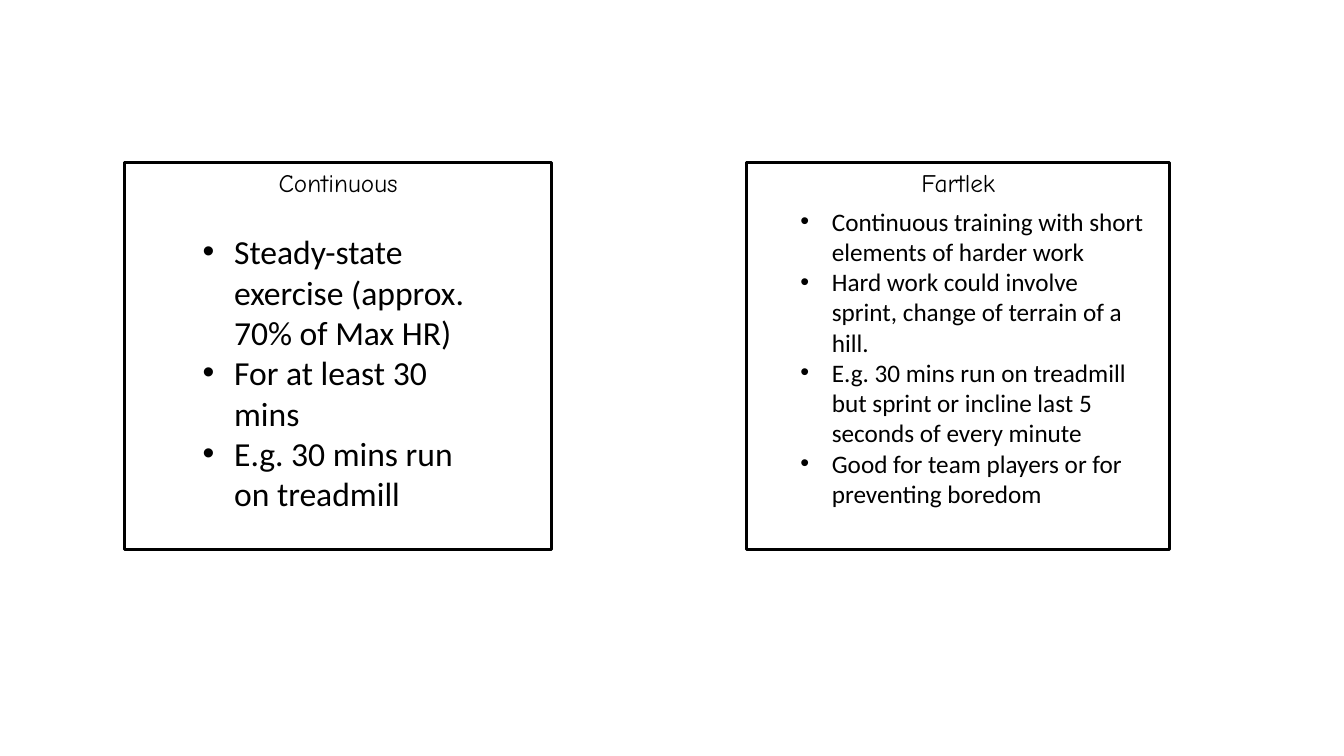
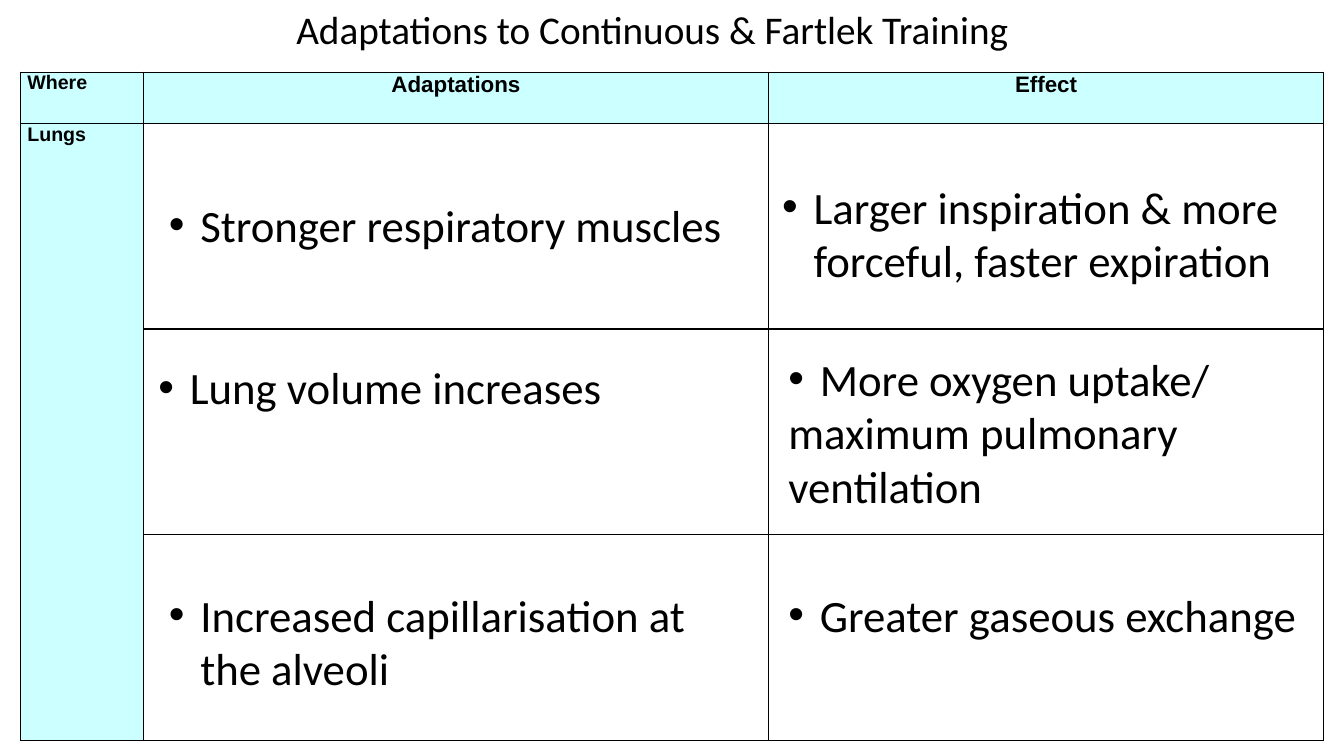
from lxml.etree import SubElement
from pptx import Presentation
from pptx.dml.color import RGBColor
from pptx.enum.text import MSO_ANCHOR, MSO_AUTO_SIZE, PP_ALIGN
from pptx.oxml.ns import qn
from pptx.util import Pt

# Shared look
BLACK, WHITE, HEADER_BLUE = "000000", "FFFFFF", "CCFFFF"
BODY_FONT, CARD_FONT, TABLE_FONT = "Calibri", "Comic Neue", "Arial"
BULLET_INDENT = 22.5
TITLE_ONLY, COMPARISON = 5, 4

# Training methods: heading, card area, list area, list size, points
METHODS = [
    ("Continuous", (89, 116, 305, 276.5), (137.5, 161.5, 220.5, 211), 24,
     ["Steady-state exercise (approx. 70% of Max HR)",
      "For at least 30 mins",
      "E.g. 30 mins run on treadmill"]),
    ("Fartlek", (533.5, 116, 302, 276.5), (564.5, 143.5, 263.5, 247), 18,
     ["Continuous training with short elements of harder work",
      "Hard work could involve sprint, change of terrain of a hill.",
      "E.g. 30 mins run on treadmill but sprint or incline last 5 "
      "seconds of every minute",
      "Good for team players or for preventing boredom"]),
]

# Lung adaptations and their effects: area, bulleted point, further lines
LUNG_POINTS = [
    ((113.5, 137.5, 414, 46), "Stronger respiratory muscles", []),
    ((551.5, 124.5, 386, 85), "Larger inspiration & more forceful, faster expiration", []),
    ((106, 253.5, 402.5, 46), "Lung volume increases", []),
    ((556, 247.5, 386, 124), "More oxygen uptake/",
     ["maximum pulmonary", "ventilation"]),
    ((113.5, 416, 425, 85), "Increased capillarisation at the alveoli", []),
    ((556, 416, 388, 46), "Greater gaseous exchange", []),
]


def colour(hex_code):
    return RGBColor.from_string(hex_code)


def place(shape, area):
    shape.left, shape.top, shape.width, shape.height = (Pt(length) for length in area)


def prepare_frame(shape):
    frame = shape.text_frame
    frame.word_wrap = True
    frame.auto_size = MSO_AUTO_SIZE.NONE
    frame.vertical_anchor = MSO_ANCHOR.TOP
    return frame


def write(paragraph, text, size, font=BODY_FONT, bold=False, align=PP_ALIGN.LEFT):
    paragraph.alignment = align
    paragraph.space_before = Pt(0)
    run = paragraph.add_run()
    run.text = text
    run.font.size = Pt(size)
    run.font.name = font
    run.font.bold = bold
    run.font.color.rgb = colour(BLACK)


def add_bullet(paragraph):
    properties = paragraph._p.get_or_add_pPr()
    properties.set("marL", str(Pt(BULLET_INDENT)))
    properties.set("indent", str(-Pt(BULLET_INDENT)))
    SubElement(properties, qn("a:buFont"), typeface="Arial")
    SubElement(properties, qn("a:buChar"), char="•")


def fill_list(shape, area, size, points, plain_lines=()):
    place(shape, area)
    frame = prepare_frame(shape)
    for index, text in enumerate([*points, *plain_lines]):
        paragraph = frame.paragraphs[0] if index == 0 else frame.add_paragraph()
        if index < len(points):
            add_bullet(paragraph)
        write(paragraph, text, size)


def fill_card(shape, area, heading):
    place(shape, area)
    shape.fill.solid()
    shape.fill.fore_color.rgb = colour(WHITE)
    shape.line.color.rgb = colour(BLACK)
    shape.line.width = Pt(2)
    write(prepare_frame(shape).paragraphs[0], heading, 18, CARD_FONT,
          align=PP_ALIGN.CENTER)


def add_borders(cell):
    properties = cell._tc.get_or_add_tcPr()
    for position, side in enumerate(("lnL", "lnR", "lnT", "lnB")):
        border = properties.makeelement(qn(f"a:{side}"), {"w": str(Pt(1))})
        fill = SubElement(border, qn("a:solidFill"))
        SubElement(fill, qn("a:srgbClr"), val=BLACK)
        properties.insert(position, border)


def add_adaptation_table(slide):
    widths, heights = (88, 446.5, 396.5), (36.5, 147, 147, 147)
    table = slide.shapes.add_table(
        len(heights), len(widths), Pt(14.5), Pt(51.5),
        Pt(sum(widths)), Pt(sum(heights))).table
    table.first_row = table.horz_banding = False
    for column, width in zip(table.columns, widths):
        column.width = Pt(width)
    for row, height in zip(table.rows, heights):
        row.height = Pt(height)

    # Tinted header row and first column, plain body
    for row in range(len(heights)):
        for column in range(len(widths)):
            cell = table.cell(row, column)
            cell.margin_left = cell.margin_right = Pt(5)
            cell.margin_top = cell.margin_bottom = Pt(0)
            if row == 0 or column == 0:
                cell.fill.solid()
                cell.fill.fore_color.rgb = colour(HEADER_BLUE)
            else:
                cell.fill.background()
            add_borders(cell)
    table.cell(1, 0).merge(table.cell(len(heights) - 1, 0))

    labels = [(0, 0, "Where", 14, PP_ALIGN.LEFT),
              (0, 1, "Adaptations", 16, PP_ALIGN.CENTER),
              (0, 2, "Effect", 16, PP_ALIGN.CENTER),
              (1, 0, "Lungs", 14, PP_ALIGN.LEFT)]
    for row, column, text, size, align in labels:
        write(table.cell(row, column).text_frame.paragraphs[0], text, size,
              TABLE_FONT, True, align)


def build_methods(deck):
    slide = deck.slides.add_slide(deck.slide_layouts[COMPARISON])
    title, *bodies = slide.placeholders
    title.element.getparent().remove(title.element)
    for method, card, points_body in zip(METHODS, bodies[::2], bodies[1::2]):
        heading, card_area, list_area, size, points = method
        fill_card(card, card_area, heading)
        fill_list(points_body, list_area, size, points)


def build_adaptations(deck):
    slide = deck.slides.add_slide(deck.slide_layouts[TITLE_ONLY])
    title = slide.shapes.title
    place(title, (204.5, 0, 529, 41))
    write(prepare_frame(title).paragraphs[0],
          "Adaptations to Continuous & Fartlek Training", 28)
    add_adaptation_table(slide)
    for area, point, further_lines in LUNG_POINTS:
        point_box = slide.shapes.add_textbox(*(Pt(length) for length in area))
        fill_list(point_box, area, 32, [point], further_lines)


def main():
    deck = Presentation()
    deck.slide_width, deck.slide_height = Pt(960), Pt(540)
    build_methods(deck)
    build_adaptations(deck)
    deck.save("out.pptx")


if __name__ == "__main__":
    main()
